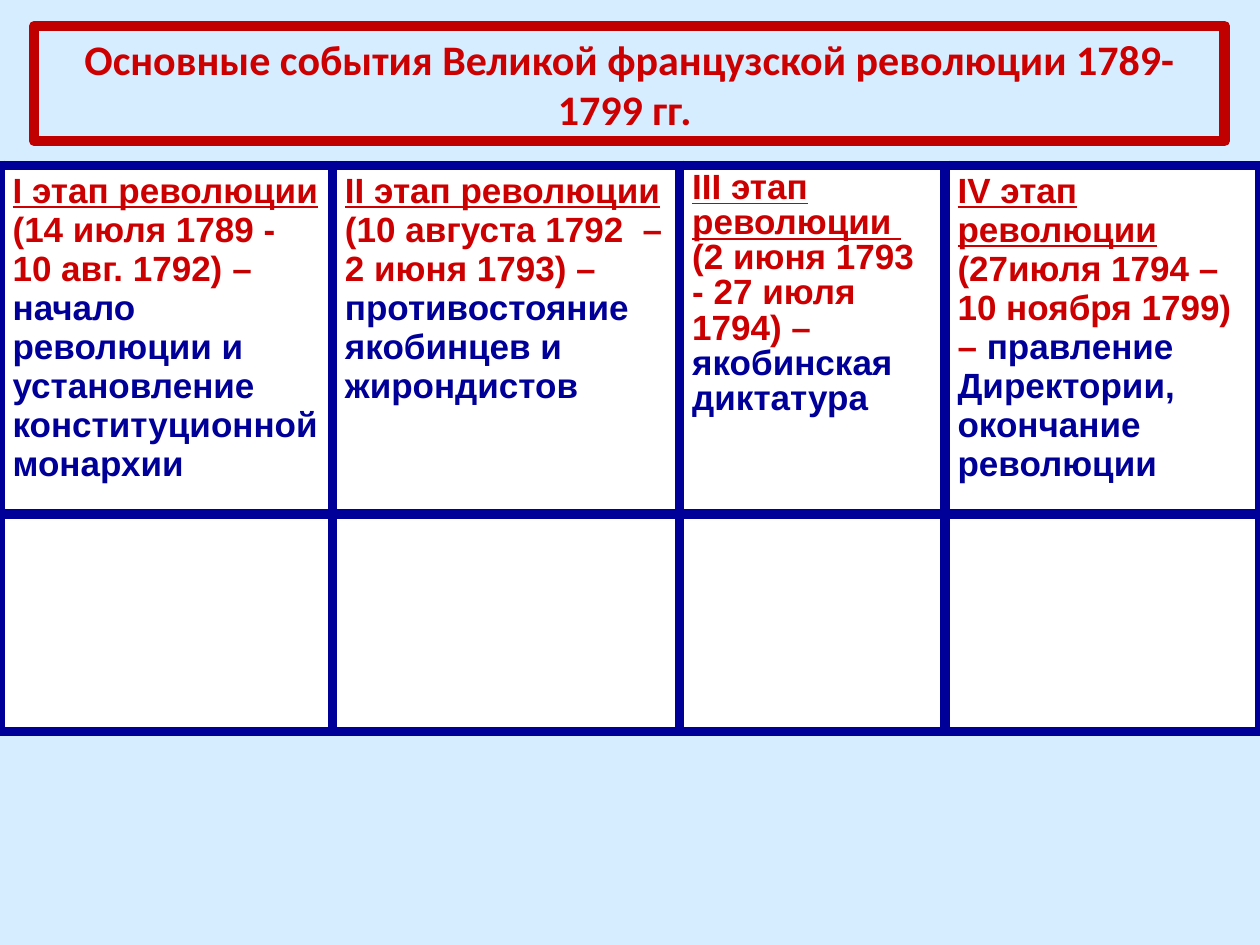
from dataclasses import dataclass

from lxml.etree import SubElement
from pptx import Presentation
from pptx.dml.color import RGBColor
from pptx.enum.text import MSO_ANCHOR, MSO_AUTO_SIZE, PP_ALIGN
from pptx.oxml.ns import qn
from pptx.util import Cm, Pt


@dataclass(frozen=True)
class Theme:
    """Colours, fonts and sizes of the deck."""
    background: str = "D6ECFF"
    frame: str = "C00000"
    accent: str = "CC0000"
    navy: str = "000099"
    cell: str = "FFFFFF"
    title_font: str = "Calibri"
    table_font: str = "Arial"
    title_size: int = 24
    table_size: int = 20
    line_width: int = 6


@dataclass(frozen=True)
class Box:
    """A rectangle in centimetres."""
    left: float
    top: float
    width: float
    height: float

    def lengths(self):
        """Return the four sides as slide lengths."""
        return [Cm(side) for side in (self.left, self.top, self.width, self.height)]


THEME = Theme()
TITLE = "Основные события Великой французской революции 1789-1799 гг. "
COLUMN_SHARES = (6.7, 7.0, 5.35, 6.35)
ROW_SHARES = (7.01, 4.39)
HEAD, DATE, DASH, TEXT = (
    (THEME.accent, True), (THEME.accent, False), (THEME.frame, False), (THEME.navy, False))
STAGES = [
    (1.0, [[("I этап революции ", HEAD), ("(14 июля 1789 - 10 авг. 1792) ", DATE), ("– ", DASH),
            ("начало революции и установление конституционной монархии", TEXT)]]),
    (1.0, [[("II этап революции", HEAD)],
           [("(10 августа 1792  – 2 июня 1793) –", DATE)],
           [("противостояние якобинцев и жирондистов", TEXT)]]),
    (0.9, [[("III этап революции ", HEAD)],
           [("(2 июня 1793 - 27 июля 1794) –", DATE)],
           [("якобинская диктатура", TEXT)]]),
    (1.0, [[("IV этап революции ", HEAD), ("(27июля 1794 – 10 ноября 1799) – ", DATE),
            ("правление Директории, окончание революции", TEXT)]]),
]


def paint(fill, color):
    """Give a fill one solid colour."""
    fill.solid()
    fill.fore_color.rgb = RGBColor.from_string(color)


def add_span(para, text, font_name, size, color, underline=False):
    """Add one bold run to a paragraph."""
    span = para.add_run()
    span.text = text
    font = span.font
    font.name, font.size, font.bold = font_name, Pt(size), True
    font.underline = underline
    font.color.rgb = RGBColor.from_string(color)


def place_title(page, box):
    """Place the framed heading in the title placeholder."""
    title = page.shapes.title
    title.left, title.top, title.width, title.height = box.lengths()
    title.line.color.rgb = RGBColor.from_string(THEME.frame)
    title.line.width = Pt(THEME.line_width)
    frame = title.text_frame
    frame.word_wrap = True
    frame.auto_size = MSO_AUTO_SIZE.SHAPE_TO_FIT_TEXT
    frame.vertical_anchor = MSO_ANCHOR.MIDDLE
    para = frame.paragraphs[0]
    para.alignment = PP_ALIGN.CENTER
    add_span(para, TITLE, THEME.title_font, THEME.title_size, THEME.accent)


def format_cell(cell):
    """Border a cell on every side and fill it."""
    properties = cell._tc.get_or_add_tcPr()
    for side in ("a:lnL", "a:lnR", "a:lnT", "a:lnB"):
        line = SubElement(properties, qn(side), w=str(Pt(THEME.line_width)))
        SubElement(SubElement(line, qn("a:solidFill")), qn("a:srgbClr"), val=THEME.navy)
    paint(cell.fill, THEME.cell)


def write_stage(cell, line_spacing, paragraphs):
    """Write the description of one stage into its cell."""
    frame = cell.text_frame
    for index, spans in enumerate(paragraphs):
        para = frame.add_paragraph() if index else frame.paragraphs[0]
        para.line_spacing = line_spacing
        for text, (color, underline) in spans:
            add_span(para, text, THEME.table_font, THEME.table_size, color, underline)


def place_stages(page, box):
    """Place the table of stages, sharing the box among columns and rows."""
    table = page.shapes.add_table(len(ROW_SHARES), len(STAGES), *box.lengths()).table
    for column, share in zip(table.columns, COLUMN_SHARES):
        column.width = Cm(box.width * share / sum(COLUMN_SHARES))
    for row, share in zip(table.rows, ROW_SHARES):
        row.height = Cm(box.height * share / sum(ROW_SHARES))
    for cell in table.iter_cells():
        format_cell(cell)
    for cell, (line_spacing, paragraphs) in zip(table.rows[0].cells, STAGES):
        write_stage(cell, line_spacing, paragraphs)


def main():
    """Build the deck and save it."""
    deck = Presentation()
    deck.slide_width, deck.slide_height = Cm(25.4), Cm(19.05)
    page = deck.slides.add_slide(deck.slide_layouts.get_by_name("Title Only"))
    paint(page.background.fill, THEME.background)
    place_title(page, Box(0.69, 0.53, 24, 2.31))
    place_stages(page, Box(0, 3.33, 25.4, 11.4))
    deck.save("out.pptx")


if __name__ == "__main__":
    main()
